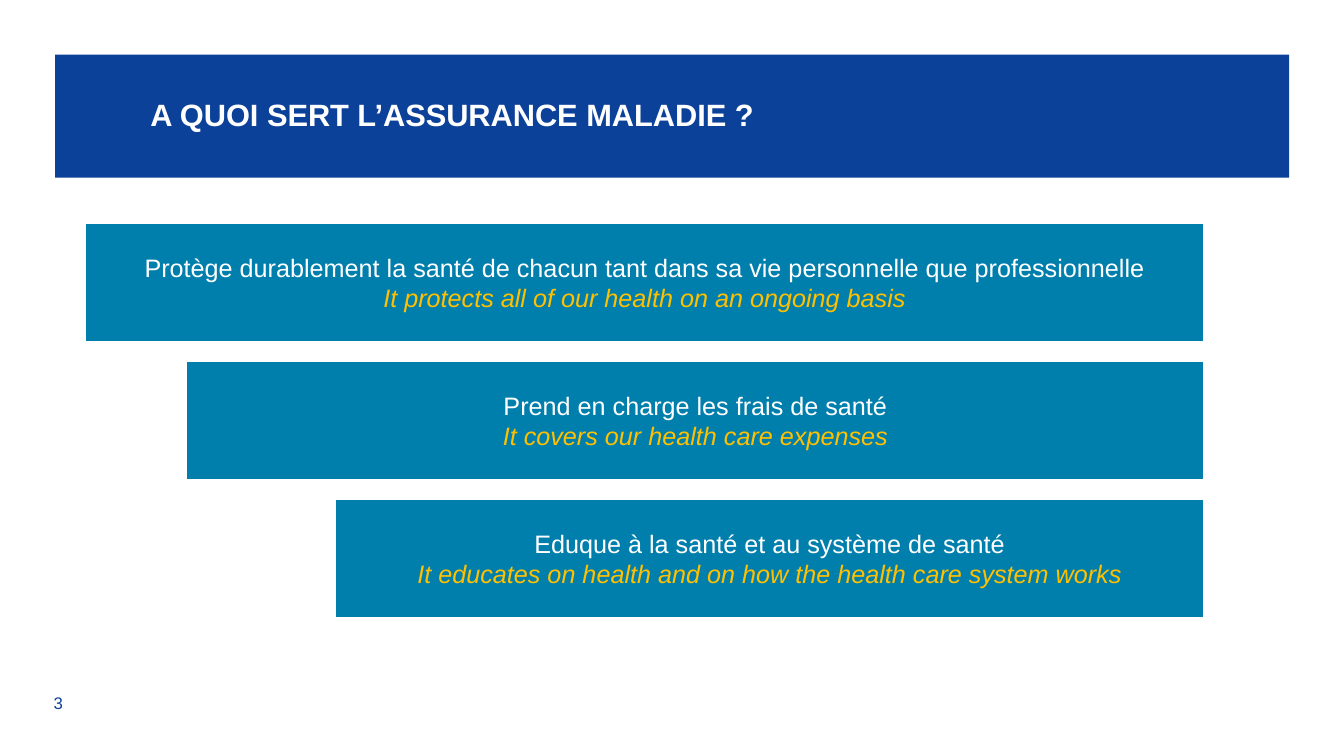
"""Build the slide on what health insurance is for."""
from pptx import Presentation
from pptx.dml.color import RGBColor
from pptx.enum.shapes import MSO_SHAPE
from pptx.enum.text import MSO_ANCHOR, PP_ALIGN
from pptx.util import Cm, Pt

TITLE = "A QUOI SERT L’ASSURANCE MALADIE ?"
PAGE = "3"
STEPS = [
    (2.11, "Protège durablement la santé de chacun tant dans sa vie personnelle que professionnelle",
     "It protects all of our health on an ongoing basis"),
    (4.67, "Prend en charge les frais de santé",
     "It covers our health care expenses"),
    (8.41, "Eduque à la santé et au système de santé",
     "It educates on health and on how the health care system works"),
]
RIGHT, TOP, PITCH, HIGH = 30.38, 5.59, 3.48, 3.05

NAVY = RGBColor(0x0C, 0x41, 0x9A)
TEAL = RGBColor(0x00, 0x7F, 0xAD)
GOLD = RGBColor(0xFF, 0xC0, 0x00)
WHITE = RGBColor(0xFF, 0xFF, 0xFF)
RECT = MSO_SHAPE.RECTANGLE
MIDDLE = MSO_ANCHOR.MIDDLE
LEFT, CENTER = PP_ALIGN.LEFT, PP_ALIGN.CENTER


def style(para, text, size, color, align=LEFT, bold=False, italic=False):
    para.text = text
    para.alignment = align
    font = para.font
    font.name, font.size = "Arial", Pt(size)
    font.bold, font.italic = bold, italic
    font.color.rgb = color


def add_bar(slide, box, fill):
    bar = slide.shapes.add_shape(RECT, *map(Cm, box))
    bar.shadow.inherit = False
    bar.fill.solid()
    bar.fill.fore_color.rgb = fill
    bar.line.fill.background()
    frame = bar.text_frame
    frame.word_wrap = True
    frame.vertical_anchor = MIDDLE
    return bar


def main():
    prs = Presentation()
    prs.slide_width, prs.slide_height = Cm(33.87), Cm(19.05)
    slide = prs.slides.add_slide(prs.slide_layouts[6])

    page = slide.shapes.add_textbox(Cm(1.1), Cm(17.3), Cm(2), Cm(0.8)).text_frame
    page.word_wrap = True
    page.vertical_anchor = MIDDLE
    style(page.paragraphs[0], PAGE, 12, NAVY)

    head = add_bar(slide, (1.39, 1.38, 31.1, 3.1), NAVY).text_frame
    head.margin_left = Cm(2.4)
    head.margin_right = head.margin_top = head.margin_bottom = Cm(0.2)
    style(head.paragraphs[0], TITLE, 22, WHITE, bold=True)
    head.paragraphs[0].line_spacing = 0.9

    for row, (left, french, english) in enumerate(STEPS):
        bar = add_bar(slide, (left, TOP + row * PITCH, RIGHT - left, HIGH), TEAL)
        bar.line.color.rgb = WHITE
        bar.line.width = Pt(3)
        frame = bar.text_frame
        style(frame.paragraphs[0], french, 18, WHITE, CENTER)
        style(frame.add_paragraph(), english, 18, GOLD, CENTER, italic=True)

    prs.save("out.pptx")


if __name__ == "__main__":
    main()
